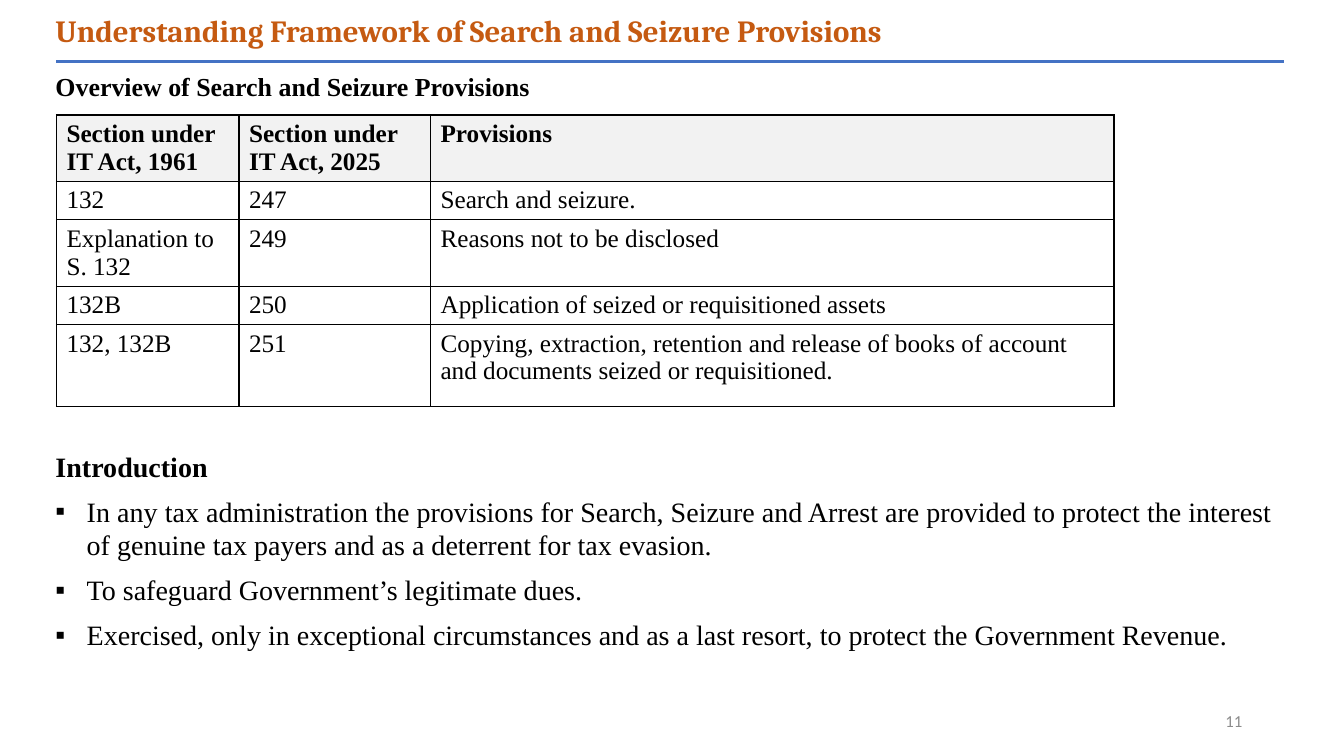
"""Build the slide on the framework of search and seizure provisions."""
from lxml.etree import SubElement
from pptx import Presentation
from pptx.dml.color import RGBColor
from pptx.enum.shapes import MSO_CONNECTOR
from pptx.enum.text import MSO_ANCHOR, MSO_AUTO_SIZE, PP_ALIGN
from pptx.oxml.ns import qn
from pptx.util import Inches, Pt

TITLE = "Understanding Framework of Search and Seizure Provisions"
SUBTITLE = "Overview of Search and Seizure Provisions"
PROVISIONS = [
    ("Section under IT Act, 1961", "Section under IT Act, 2025", "Provisions"),
    ("132", "247", "Search and seizure."),
    ("Explanation to S. 132", "249", "Reasons not to be disclosed"),
    ("132B", "250", "Application of seized or requisitioned assets"),
    ("132, 132B", "251", "Copying, extraction, retention and release of books of account "
     "and documents seized or requisitioned."),
]
COLUMN_WIDTHS = (1.81, 1.9, 6.78)
ROW_HEIGHTS = (0.66, 0.38, 0.66, 0.38, 0.81)
HEADING = "Introduction"
POINTS = [
    "In any tax administration the provisions for Search, Seizure and Arrest are provided "
    "to protect the interest of genuine tax payers and as a deterrent for tax evasion.",
    "To safeguard Government’s legitimate dues.",
    "Exercised, only in exceptional circumstances and as a last resort, "
    "to protect the Government Revenue.",
]
PAGE_NUMBER = "11"
COLORS = {"title": "C55A11", "rule": "4472C4", "text": "000000",
          "header": "F2F2F2", "border": "000000", "number": "8C8C8C"}
BODY_FONT = "Times New Roman"


def place(shape, left, top, width, height):
    shape.left, shape.top = Inches(left), Inches(top)
    shape.width, shape.height = Inches(width), Inches(height)
    shape.text_frame.word_wrap = True
    shape.text_frame.auto_size = MSO_AUTO_SIZE.NONE


def style(paragraph, size, bold=False, name=BODY_FONT, color="text", align=PP_ALIGN.LEFT):
    paragraph.alignment = align
    font = paragraph.font
    font.name, font.size, font.bold = name, Pt(size), bold
    font.color.rgb = RGBColor.from_string(COLORS[color])


def set_bullet(paragraph, bullet=None):
    properties = paragraph._p.get_or_add_pPr()
    indent = Inches(0.31) if bullet else 0
    properties.set("marL", str(indent))
    properties.set("indent", str(-indent))
    if bullet:
        mark = SubElement(properties, qn("a:buChar"))
        mark.set("char", bullet)
    else:
        mark = SubElement(properties, qn("a:buNone"))
    properties.remove(mark)
    properties.insert_element_before(mark, "a:tabLst", "a:defRPr", "a:extLst")


def add_borders(cell):
    properties = cell._tc.get_or_add_tcPr()
    for side in ("lnL", "lnR", "lnT", "lnB"):
        line = SubElement(properties, qn(f"a:{side}"), w=str(Pt(1)))
        fill = SubElement(line, qn("a:solidFill"))
        SubElement(fill, qn("a:srgbClr"), val=COLORS["border"])


def add_provisions_table(slide):
    frame = slide.shapes.add_table(
        len(PROVISIONS), len(COLUMN_WIDTHS), Inches(0.56), Inches(1.14),
        Inches(sum(COLUMN_WIDTHS)), Inches(sum(ROW_HEIGHTS)))
    table = frame.table
    table.horz_banding = False
    for column, width in zip(table.columns, COLUMN_WIDTHS):
        column.width = Inches(width)
    for row, height in zip(table.rows, ROW_HEIGHTS):
        row.height = Inches(height)
    for row_index, entries in enumerate(PROVISIONS):
        is_header = row_index == 0
        for column_index, entry in enumerate(entries):
            cell = table.cell(row_index, column_index)
            cell.text = entry
            style(cell.text_frame.paragraphs[0], 18, is_header)
            add_borders(cell)
            if is_header:
                cell.fill.solid()
                cell.fill.fore_color.rgb = RGBColor.from_string(COLORS["header"])
            else:
                cell.fill.background()


def main():
    presentation = Presentation()
    presentation.slide_width, presentation.slide_height = Inches(13.33), Inches(7.5)
    slide = presentation.slides.add_slide(presentation.slide_layouts[3])
    title, subtitle, introduction = slide.placeholders

    place(title, 0.45, 0.15, 11.96, 0.34)
    title.text_frame.text = TITLE
    title.text_frame.vertical_anchor = MSO_ANCHOR.MIDDLE
    style(title.text_frame.paragraphs[0], 22, True, "Cambria", "title")
    title.text_frame.paragraphs[0].line_spacing = 0.9

    rule = slide.shapes.add_connector(
        MSO_CONNECTOR.STRAIGHT, Inches(0.56), Inches(0.61), Inches(12.73), Inches(0.61))
    rule.line.color.rgb = RGBColor.from_string(COLORS["rule"])
    rule.line.width = Pt(1.5)
    SubElement(rule._element.spPr, qn("a:effectLst"))

    place(subtitle, 0.45, 0.65, 12.38, 0.45)
    subtitle.text_frame.text = SUBTITLE
    paragraph = subtitle.text_frame.paragraphs[0]
    style(paragraph, 18.5, True, align=PP_ALIGN.JUSTIFY)
    paragraph.space_before = Pt(0)
    set_bullet(paragraph)

    add_provisions_table(slide)

    place(introduction, 0.45, 4.41, 12.27, 2.12)
    introduction.text_frame.text = "\n".join([HEADING, *POINTS])
    for index, paragraph in enumerate(introduction.text_frame.paragraphs):
        is_heading = index == 0
        style(paragraph, 20, is_heading, align=PP_ALIGN.JUSTIFY)
        paragraph.space_before, paragraph.space_after = Pt(0), Pt(8)
        set_bullet(paragraph, None if is_heading else "▪")

    number = slide.shapes.add_textbox(0, 0, 0, 0)
    place(number, 9.42, 6.95, 3, 0.4)
    number.text_frame.text = PAGE_NUMBER
    number.text_frame.vertical_anchor = MSO_ANCHOR.MIDDLE
    style(number.text_frame.paragraphs[0], 12, False, "Calibri", "number", PP_ALIGN.RIGHT)

    presentation.save("out.pptx")


if __name__ == "__main__":
    main()
